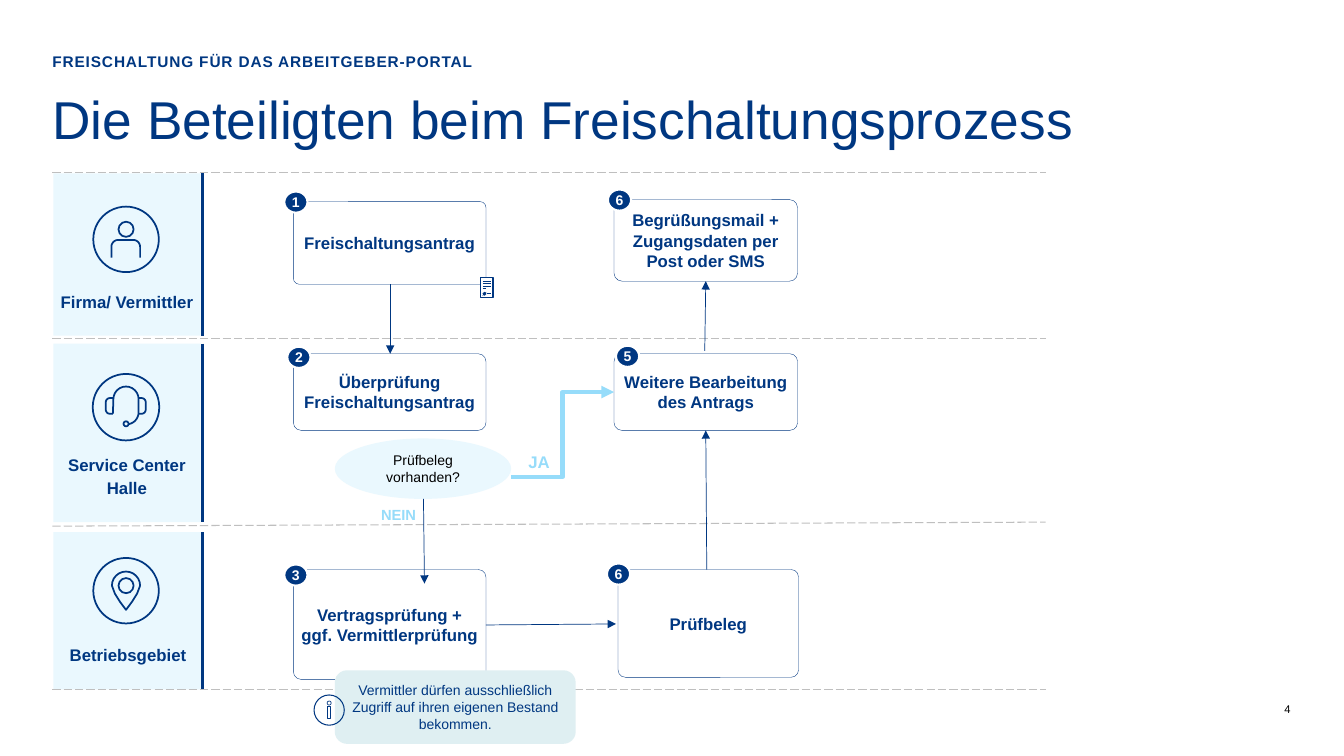
import math
from dataclasses import dataclass

import pptx
import pptx.dml.color
import pptx.enum.dml
import pptx.enum.shapes
import pptx.enum.text
import pptx.oxml
import pptx.oxml.ns
import pptx.util

RGBColor = pptx.dml.color.RGBColor
Shape = pptx.enum.shapes.MSO_SHAPE
Connector = pptx.enum.shapes.MSO_CONNECTOR
Align = pptx.enum.text.PP_ALIGN
Anchor = pptx.enum.text.MSO_ANCHOR

NAVY = RGBColor(0x00, 0x37, 0x81)
SKY = RGBColor(0x96, 0xDC, 0xFA)
PALE = RGBColor(0xEA, 0xF8, 0xFE)
MIST = RGBColor(0xDF, 0xEF, 0xF2)
GRAY = RGBColor(0xBF, 0xBF, 0xBF)
WHITE = RGBColor(0xFF, 0xFF, 0xFF)
BLACK = RGBColor(0x00, 0x00, 0x00)

COLUMNS, ROWS = 133.3, 75
CELL = pptx.util.Inches(0.1)
NO_MARGINS = (0, 0, 0, 0)
Point = tuple[float, float]


@dataclass
class Box:
    left: float
    top: float
    width: float
    height: float


@dataclass
class Lane:
    box: Box
    label: str


@dataclass
class Step:
    box: Box
    text: str
    number: str
    badge: Point
    corner: float


@dataclass
class Link:
    start: Point
    end: Point
    color: RGBColor = NAVY
    weight: float = 0.5
    arrow: bool = True
    dashed: bool = False
    kind: int = Connector.STRAIGHT


@dataclass
class Ring:
    center: Point
    radius: float
    weight: float = 1.25


def grid(value: float) -> pptx.util.Emu:
    return pptx.util.Emu(round(value * CELL))


def place(box: Box) -> list[pptx.util.Emu]:
    return [grid(value) for value in (box.left, box.top, box.width, box.height)]


def write(shape, text: str, size: float, color: RGBColor = NAVY, bold: bool = False,
          align=Align.CENTER, anchor=Anchor.MIDDLE, margins=NO_MARGINS,
          wrap: bool = True, spacing: float = 0) -> None:
    frame = shape.text_frame
    frame.text = text
    frame.word_wrap = wrap
    frame.vertical_anchor = anchor
    (frame.margin_left, frame.margin_top,
     frame.margin_right, frame.margin_bottom) = map(grid, margins)
    for index, paragraph in enumerate(frame.paragraphs):
        paragraph.alignment = align
        paragraph.space_before = pptx.util.Pt(spacing if index else 0)
        paragraph.space_after = pptx.util.Pt(spacing)
        paragraph.font.name = "Arial"
        paragraph.font.size = pptx.util.Pt(size)
        paragraph.font.bold = bold
        paragraph.font.color.rgb = color


def paint(shape, fill: RGBColor | None, line: RGBColor | None, weight: float) -> None:
    shape.shadow.inherit = False
    if fill is None:
        shape.fill.background()
    else:
        shape.fill.solid()
        shape.fill.fore_color.rgb = fill
    if line is None:
        shape.line.fill.background()
    else:
        shape.line.color.rgb = line
        shape.line.width = pptx.util.Pt(weight)


def draw_shape(slide, kind, box: Box, fill=None, line=None, weight: float = 0.25):
    shape = slide.shapes.add_shape(kind, *place(box))
    paint(shape, fill, line, weight)
    return shape


def draw_text(slide, box: Box, text: str, size: float, **style):
    shape = slide.shapes.add_textbox(*place(box))
    write(shape, text, size, anchor=Anchor.TOP, **style)
    return shape


def draw_link(slide, link: Link) -> None:
    connector = slide.shapes.add_connector(link.kind, *map(grid, link.start + link.end))
    connector.line.color.rgb = link.color
    connector.line.width = pptx.util.Pt(link.weight)
    if link.dashed:
        connector.line.dash_style = pptx.enum.dml.MSO_LINE.LONG_DASH
    if link.arrow:
        tail = pptx.oxml.parse_xml(f'<a:tailEnd {pptx.oxml.ns.nsdecls("a")} type="triangle"/>')
        connector.line._get_or_add_ln().append(tail)
    effects = pptx.oxml.parse_xml(f'<a:effectLst {pptx.oxml.ns.nsdecls("a")}/>')
    connector._element.spPr.append(effects)


def draw_ring(slide, ring: Ring) -> None:
    x, y = ring.center
    box = Box(x - ring.radius, y - ring.radius, 2 * ring.radius, 2 * ring.radius)
    draw_shape(slide, Shape.OVAL, box, line=NAVY, weight=ring.weight)


def draw_outline(slide, points: list[Point], closed: bool = False) -> None:
    corners = [(grid(x), grid(y)) for x, y in points]
    builder = slide.shapes.build_freeform(*corners[0])
    builder.add_line_segments(corners[1:], close=closed)
    paint(builder.convert_to_shape(), None, NAVY, 1.25)


def arc(x: float, y: float, radius: float, start: int, end: int) -> list[Point]:
    angles = [math.radians(start + (end - start) * part / 12) for part in range(13)]
    return [(x + radius * math.cos(angle), y + radius * math.sin(angle)) for angle in angles]


LANES = [
    Lane(Box(5.3, 17.2, 14.6, 16.1), "Firma/ Vermittler"),
    Lane(Box(5.3, 34.1, 14.6, 17.7), "Service Center\nHalle"),
    Lane(Box(5.3, 52.8, 14.8, 15.6), "Betriebsgebiet"),
]
STEPS = [
    Step(Box(29.1, 20, 19.1, 8.2), "Freischaltungsantrag", "1", (28.2, 19), 0.07),
    Step(Box(29.1, 35.1, 19.1, 7.6), "Überprüfung Freischaltungsantrag", "2", (28.5, 34.4), 0.1),
    Step(Box(29.1, 56.5, 19.1, 10.9), "Vertragsprüfung + ggf. Vermittlerprüfung", "3", (28.2, 56), 0.07),
    Step(Box(60.9, 19.8, 18.2, 8.1), "Begrüßungsmail + Zugangsdaten per Post oder SMS", "6", (60.3, 18.8), 0.1),
    Step(Box(60.9, 35.1, 18.2, 7.6), "Weitere Bearbeitung des Antrags", "5", (61.1, 34.3), 0.1),
    Step(Box(61.3, 56.5, 17.9, 10.7), "Prüfbeleg", "6", (60.2, 55.9), 0.07),
]
DIVIDERS = [(17.1, 17.1), (33.6, 33.6), (52.2, 51.8), (68.4, 68.4)]
LINKS = [
    Link((38.7, 28.2), (38.7, 35.1)),
    Link((42, 49.5), (42.1, 57.9)),
    Link((48.2, 62), (61.1, 61.9)),
    Link((70.1, 56.5), (70, 42.7)),
    Link((69.9, 34.8), (70, 27.9)),
    Link((50.7, 47.3), (60.9, 38.9), SKY, 3, kind=Connector.ELBOW),
]
RINGS = [
    Ring((12.5, 23.75), 3.25), Ring((12.5, 22.75), 0.75),
    Ring((12.5, 40.4), 3.3), Ring((12.5, 42.05), 0.25),
    Ring((12.5, 58.6), 3.25), Ring((12.5, 58.1), 0.75),
    Ring((32.65, 70.45), 1.5, 0.75), Ring((32.65, 69.75), 0.2, 0.5),
]
SHOULDERS = [(11.05, 25.55), *arc(11.75, 24.5, 0.7, 180, 270), *arc(13.2, 24.5, 0.7, 270, 360), (13.9, 25.55)]
HEADBAND = [(11.2, 41.05), *arc(12.5, 39.6, 1.25, 180, 360), *arc(12.55, 40.9, 1.2, 0, 80)]
EAR_CUPS = [
    [(11.2, 39.5), *arc(10.9, 39.9, 0.4, 270, 180), *arc(10.9, 40.65, 0.4, 180, 90), (11.2, 41.05)],
    [(13.75, 39.5), *arc(14.05, 39.9, 0.4, 270, 360), *arc(14.05, 40.65, 0.4, 0, 90), (13.75, 41.05)],
]
PIN = [*arc(12.5, 58.1, 1.4, 180, 360), (13.6, 58.9), (13.1, 59.7), (12.5, 60.5), (11.9, 59.7), (11.4, 58.9)]


def draw_document(slide) -> None:
    draw_shape(slide, Shape.RECTANGLE, Box(47.7, 27.5, 1.2, 2), WHITE, NAVY, 0.75)
    for left, right, y in [(47.9, 48.7, 27.9), (47.9, 48.7, 28.15), (47.9, 48.7, 28.4),
                           (47.9, 48.2, 28.6), (48.3, 48.7, 29.1)]:
        draw_link(slide, Link((left, y), (right, y), weight=0.75, arrow=False))
    cross = draw_shape(slide, Shape.CROSS, Box(47.9, 28.9, 0.3, 0.5), NAVY)
    cross.adjustments[0] = 0.4
    cross.rotation = 44.4


def main() -> None:
    presentation = pptx.Presentation()
    presentation.slide_width, presentation.slide_height = grid(COLUMNS), grid(ROWS)
    slide = presentation.slides.add_slide(presentation.slide_layouts[5])

    title = slide.shapes.title
    title.left, title.top, title.width, title.height = place(Box(5.2, 9.6, 110.6, 7.8))
    write(title, "Die Beteiligten beim Freischaltungsprozess", 38, align=Align.LEFT, anchor=Anchor.TOP)
    title.text_frame.auto_size = pptx.enum.text.MSO_AUTO_SIZE.NONE
    title.text_frame.paragraphs[0].line_spacing = pptx.util.Pt(38)
    kicker = draw_text(slide, Box(5.2, 5.2, 102, 2.8), "FREISCHALTUNG FÜR DAS ARBEITGEBER-PORTAL",
                       11, bold=True, align=Align.LEFT)
    kicker.text_frame.paragraphs[0].runs[0].font._element.set("spc", "60")
    draw_text(slide, Box(125.1, 69.7, 2.9, 1.6), "4", 8, color=BLACK, align=Align.RIGHT)

    for lane in LANES:
        panel = draw_shape(slide, Shape.RECTANGLE, lane.box, PALE)
        write(panel, lane.label, 12, bold=True, anchor=Anchor.BOTTOM, margins=(0, 0, 0, 2.4), spacing=1)
        bottom = lane.box.top + lane.box.height
        draw_link(slide, Link((20.1, lane.box.top), (20.1, bottom), weight=2.25, arrow=False))
    for start, end in DIVIDERS:
        draw_link(slide, Link((5.2, start), (103.7, end), GRAY, 0.75, False, True))

    question = draw_shape(slide, Shape.OVAL, Box(33.2, 43.5, 17.5, 6), PALE)
    write(question, "Prüfbeleg vorhanden?", 10, BLACK, margins=(1.2, 1.2, 1.2, 1.2))
    for step in STEPS:
        node = draw_shape(slide, Shape.ROUNDED_RECTANGLE, step.box, line=NAVY)
        node.adjustments[0] = step.corner
        write(node, step.text, 12, bold=True, margins=(0.4, 0.6, 0.4, 0.6), spacing=1)
    for link in LINKS:
        draw_link(slide, link)
    for step in STEPS:
        badge = draw_shape(slide, Shape.OVAL, Box(*step.badge, 2.3, 2.1), NAVY, WHITE, 1.5)
        write(badge, step.number, 10, WHITE, True, wrap=False)
    for box, answer, size in [(Box(51.6, 44, 4.6, 3.6), "JA", 12), (Box(37, 49.4, 5.4, 3.4), "NEIN", 10.5)]:
        draw_text(slide, box, answer, size, color=SKY, bold=True, align=Align.LEFT,
                  margins=(0.8, 0.8, 0.8, 0.8))
    draw_document(slide)

    notice = draw_shape(slide, Shape.ROUNDED_RECTANGLE, Box(33.2, 66.5, 23.9, 7.3), MIST)
    write(notice, "Vermittler dürfen ausschließlich Zugriff auf ihren eigenen Bestand bekommen.",
          10, margins=(1, 0.5, 1, 0.5))
    for ring in RINGS:
        draw_ring(slide, ring)
    for outline in (SHOULDERS, HEADBAND, *EAR_CUPS):
        draw_outline(slide, outline)
    draw_outline(slide, PIN, closed=True)
    draw_shape(slide, Shape.RECTANGLE, Box(32.5, 70.1, 0.3, 1.2), line=NAVY, weight=0.5)

    presentation.save("out.pptx")


if __name__ == "__main__":
    main()
